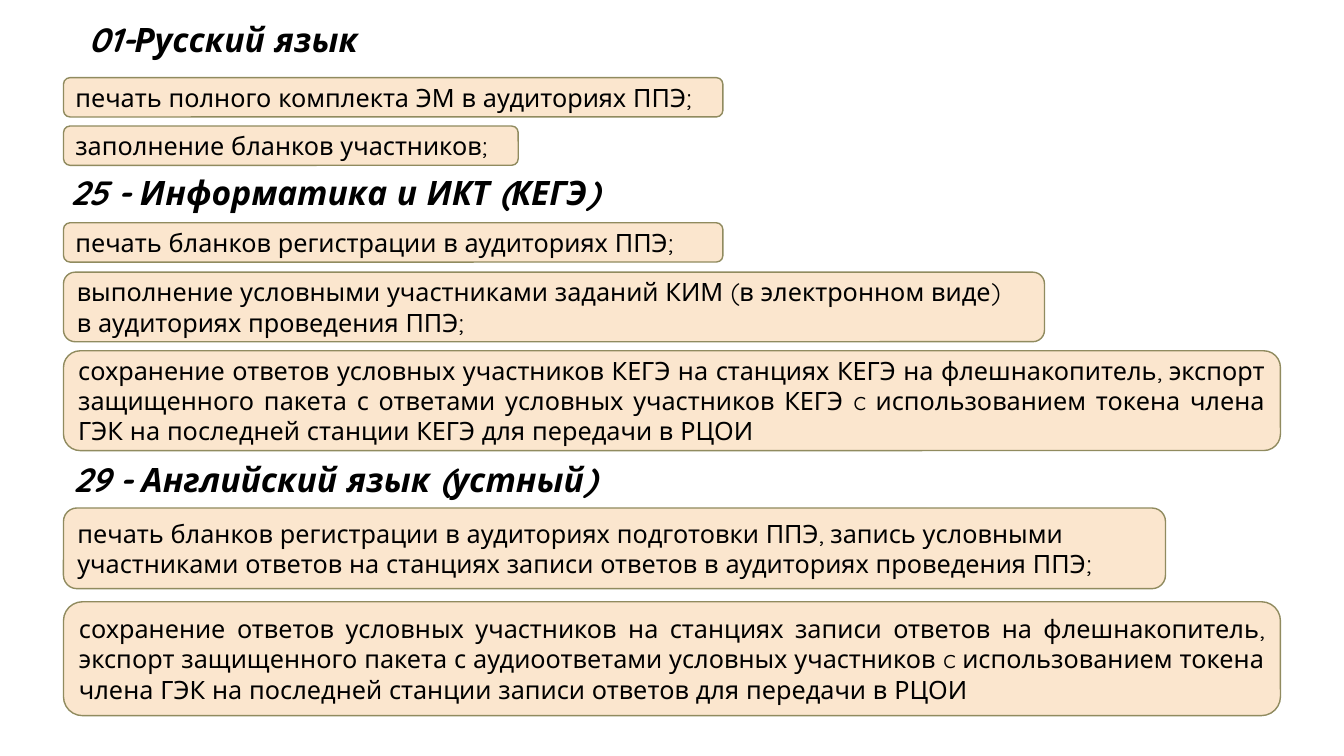
from pptx import Presentation
from pptx.dml.color import RGBColor
from pptx.enum.shapes import MSO_SHAPE as Shape
from pptx.enum.text import MSO_ANCHOR as Anchor, MSO_AUTO_SIZE as AutoSize, PP_ALIGN as Align
from pptx.util import Inches, Pt

# Content: heading (text, left, top, width), then steps (paragraphs, top, width, height, align)
SECTIONS = [
    (("01-Русский язык", 0.14, 0.14, 4.15), [
        (["печать полного комплекта ЭМ в аудиториях ППЭ;"], 0.77, 6.54, 0.39, Align.LEFT),
        (["заполнение бланков участников;"], 1.25, 4.51, 0.39, Align.LEFT),
    ]),
    (("25 - Информатика и ИКТ (КЕГЭ)", 0.37, 1.66, 5.9), [
        (["печать бланков регистрации в аудиториях ППЭ;"], 2.21, 6.54, 0.39, Align.LEFT),
        (["выполнение условными участниками заданий КИМ (в электронном виде)",
          "в аудиториях проведения ППЭ;"], 2.7, 9.73, 0.69, Align.LEFT),
        (["сохранение ответов условных участников КЕГЭ на станциях КЕГЭ на флешнакопитель, "
          "экспорт защищенного пакета с ответами условных участников КЕГЭ c использованием "
          "токена члена ГЭК на последней станции КЕГЭ для передачи в РЦОИ"],
         3.48, 12.07, 0.99, Align.JUSTIFY),
    ]),
    (("29 - Английский язык (устный)", 0.37, 4.5, 5.9), [
        (["печать бланков регистрации в аудиториях подготовки ППЭ, запись условными "
          "участниками ответов на станциях записи ответов в аудиториях проведения ППЭ;"],
         5.04, 10.93, 0.8, Align.LEFT),
        (["сохранение ответов условных участников на станциях записи ответов на "
          "флешнакопитель, экспорт защищенного пакета с аудиоответами условных участников "
          "c использованием токена члена ГЭК на последней станции записи ответов для "
          "передачи в РЦОИ"], 5.97, 12.07, 1.13, Align.JUSTIFY),
    ]),
]

STEP_LEFT = 0.63
HEADING_HEIGHT = 0.5

THEME = {
    "fill": RGBColor.from_string("FBE6CE"),
    "line": RGBColor.from_string("908B5F"),
    "text": RGBColor.from_string("000000"),
    "heading": {"name": "Quicksand", "size": Pt(24), "bold": True, "italic": True},
    "step": {"name": "Quicksand", "size": Pt(18), "bold": False, "italic": False},
}


def write(shape, paragraphs, style, align, anchor):
    frame = shape.text_frame
    frame.text = "\n".join(paragraphs)
    frame.word_wrap = True
    frame.auto_size = AutoSize.NONE
    frame.vertical_anchor = anchor
    for paragraph in frame.paragraphs:
        paragraph.alignment = align
        for run in paragraph.runs:
            for attribute, value in THEME[style].items():
                setattr(run.font, attribute, value)
            run.font.color.rgb = THEME["text"]


def add_heading(slide, is_title, text, left, top, width):
    box = tuple(map(Inches, (left, top, width, HEADING_HEIGHT)))
    if is_title:
        heading = slide.shapes.title
        heading.left, heading.top, heading.width, heading.height = box
    else:
        heading = slide.shapes.add_textbox(*box)
    write(heading, [text], "heading", Align.CENTER, Anchor.TOP)


def add_step(slide, paragraphs, top, width, height, align):
    box = map(Inches, (STEP_LEFT, top, width, height))
    step = slide.shapes.add_shape(Shape.ROUNDED_RECTANGLE, *box)
    step.shadow.inherit = False
    step.fill.solid()
    step.fill.fore_color.rgb = THEME["fill"]
    step.line.color.rgb = THEME["line"]
    step.line.width = Pt(1)
    write(step, paragraphs, "step", align, Anchor.MIDDLE)


def main():
    deck = Presentation()
    deck.slide_width, deck.slide_height = Inches(13.33), Inches(7.5)
    slide = deck.slides.add_slide(deck.slide_layouts[5])

    # Each exam: its heading, then its steps; the first heading is the slide title
    for number, (heading, steps) in enumerate(SECTIONS):
        add_heading(slide, number == 0, *heading)
        for step in steps:
            add_step(slide, *step)

    deck.save("out.pptx")


if __name__ == "__main__":
    main()
